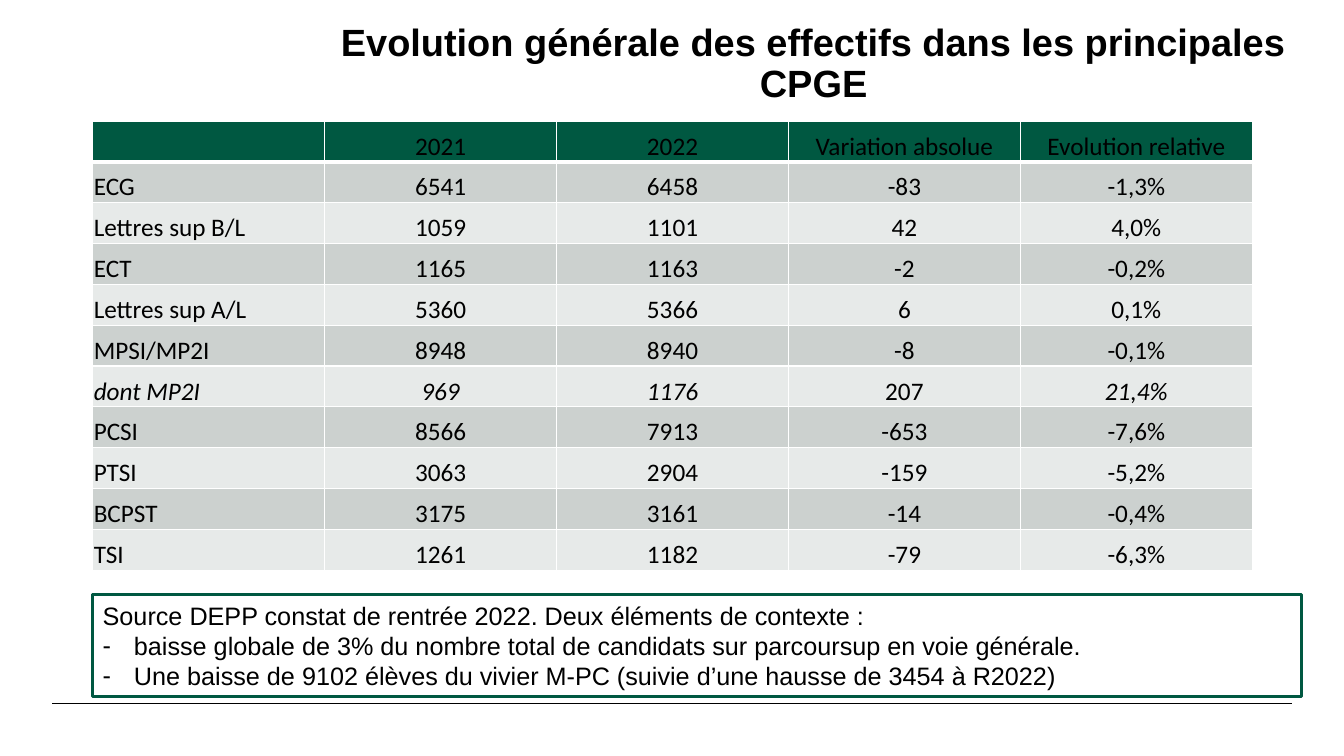
from lxml import etree
from pptx import Presentation
from pptx.dml.color import RGBColor
from pptx.enum import shapes, text
from pptx.oxml import ns
from pptx.util import Pt

SCALE = 9144  # EMU per px, 100 px to the inch
COLOURS = {
    "black": "000000",
    "white": "FFFFFF",
    "green": "005841",
    "dark_band": "CCD1CF",
    "light_band": "E7EAE9",
}
MARGINS = ("margin_left", "margin_top", "margin_right", "margin_bottom")
TITLE = "Evolution générale des effectifs dans les principales CPGE"
ROWS = [
    ("", "2021", "2022", "Variation absolue", "Evolution relative"),
    ("ECG", "6541", "6458", "-83", "-1,3%"),
    ("Lettres sup B/L", "1059", "1101", "42", "4,0%"),
    ("ECT", "1165", "1163", "-2", "-0,2%"),
    ("Lettres sup A/L", "5360", "5366", "6", "0,1%"),
    ("MPSI/MP2I", "8948", "8940", "-8", "-0,1%"),
    ("dont MP2I", "969", "1176", "207", "21,4%"),
    ("PCSI", "8566", "7913", "-653", "-7,6%"),
    ("PTSI", "3063", "2904", "-159", "-5,2%"),
    ("BCPST", "3175", "3161", "-14", "-0,4%"),
    ("TSI", "1261", "1182", "-79", "-6,3%"),
]
SUBSET_ROW, UPRIGHT_COLUMN = 6, 3
NOTES = [
    "Source DEPP constat de rentrée 2022. Deux éléments de contexte :",
    "baisse globale de 3% du nombre total de candidats sur parcoursup en voie générale.",
    "Une baisse de 9102 élèves du vivier M-PC (suivie d’une hausse de 3454 à R2022)",
]


def px(*lengths):
    return [round(length * SCALE) for length in lengths]


def colour(name):
    return RGBColor.from_string(COLOURS[name])


def set_values(target, values):
    for name, value in values.items():
        setattr(target, name, value)


def write(paragraph, words, align, **font_values):
    paragraph.alignment = align
    run = paragraph.add_run()
    run.text = words
    set_values(run.font, {"name": "Arial", "size": Pt(18), "bold": False, **font_values})
    run.font.color.rgb = colour("black")


def add_border(cell, side, points):
    line = etree.SubElement(cell._tc.get_or_add_tcPr(), ns.qn(f"a:ln{side}"), w=str(Pt(points)))
    fill = etree.SubElement(line, ns.qn("a:solidFill"))
    etree.SubElement(fill, ns.qn("a:srgbClr"), val=COLOURS["white"])


def add_dash(paragraph, indent):
    properties = paragraph._p.get_or_add_pPr()
    properties.set("marL", str(indent))
    properties.set("indent", str(-indent))
    etree.SubElement(properties, ns.qn("a:buFont"), typeface="Arial")
    etree.SubElement(properties, ns.qn("a:buChar"), char="-")


def add_title(slide, left, top, width, height):
    frame = slide.shapes.add_textbox(*px(left, top, width, height)).text_frame
    set_values(frame, {"word_wrap": True, **dict.fromkeys(MARGINS, 0)})
    paragraph = frame.paragraphs[0]
    paragraph.line_spacing = 0.9
    write(paragraph, TITLE, text.PP_ALIGN.CENTER, size=Pt(27.1), bold=True)


def add_numbers(slide, left, top, width, height):
    box = px(left, top, width, height)
    table = slide.shapes.add_table(len(ROWS), len(ROWS[0]), *box).table
    set_values(table, {"first_row": False, "horz_banding": False})
    cell_format = {
        "vertical_anchor": text.MSO_ANCHOR.BOTTOM,
        **dict(zip(MARGINS, px(1, 1, 1, 0))),
    }
    for row, values in enumerate(ROWS):
        band = "green" if row == 0 else "dark_band" if row % 2 else "light_band"
        for column, value in enumerate(values):
            cell = table.cell(row, column)
            set_values(cell, cell_format)
            # The header is set off by a thicker rule
            for side, thick_row in (("L", None), ("R", None), ("T", 1), ("B", 0)):
                add_border(cell, side, 3 if row == thick_row else 1)
            cell.fill.solid()
            cell.fill.fore_color.rgb = colour(band)
            if value:
                align = text.PP_ALIGN.CENTER if column else text.PP_ALIGN.LEFT
                italic = row == SUBSET_ROW and column != UPRIGHT_COLUMN
                write(cell.text_frame.paragraphs[0], value, align, name="Calibri", italic=italic)


def add_notes(slide, left, top, width, height):
    shape = slide.shapes.add_shape(
        shapes.MSO_SHAPE.RECTANGLE, *px(left, top, width, height))
    shape.shadow.inherit = False
    shape.fill.solid()
    shape.fill.fore_color.rgb = colour("white")
    shape.line.color.rgb = colour("green")
    shape.line.width = Pt(2)
    frame = shape.text_frame
    set_values(frame, {"word_wrap": True, "vertical_anchor": text.MSO_ANCHOR.MIDDLE})
    for index, note in enumerate(NOTES):
        paragraph = frame.add_paragraph() if index else frame.paragraphs[0]
        if index:
            add_dash(paragraph, px(31)[0])
        write(paragraph, note, text.PP_ALIGN.LEFT)


def add_footer_rule(slide, left, top, width):
    rule = slide.shapes.add_connector(
        shapes.MSO_CONNECTOR.STRAIGHT, *px(left, top, left + width, top))
    rule.line.color.rgb = colour("black")
    rule.line.width = Pt(0.8)
    etree.SubElement(rule._element.spPr, ns.qn("a:effectLst"))


def main():
    presentation = Presentation()
    presentation.slide_width, presentation.slide_height = px(1333, 750)
    slide = presentation.slides.add_slide(presentation.slide_layouts[6])
    add_footer_rule(slide, 52, 698, 1229)
    add_title(slide, 280, 24, 1054, 96)
    add_notes(slide, 92, 590, 1199, 101)
    add_numbers(slide, 92, 120, 1150, 446)
    presentation.save("out.pptx")


if __name__ == "__main__":
    main()
